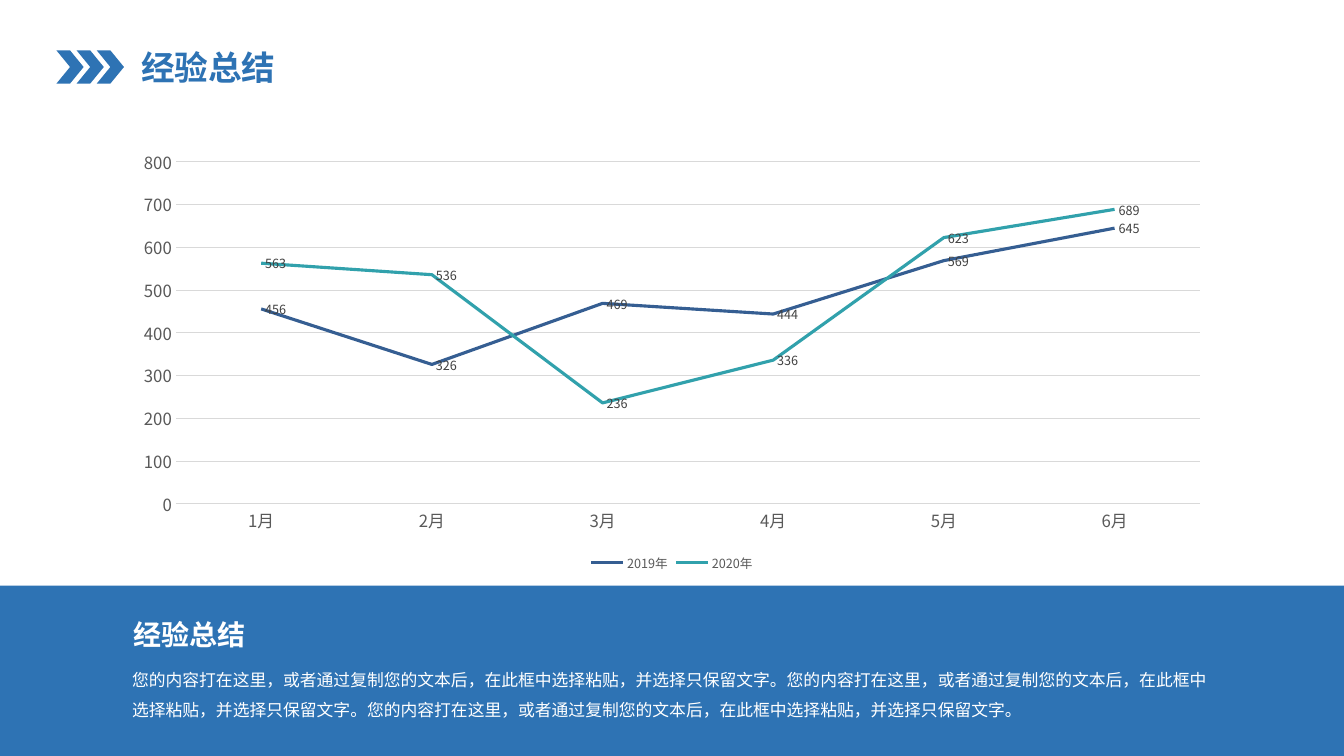
from lxml.etree import SubElement
from pptx import Presentation
from pptx.chart.data import CategoryChartData
from pptx.dml.color import RGBColor
from pptx.enum.chart import XL_CHART_TYPE, XL_LABEL_POSITION, XL_LEGEND_POSITION, XL_MARKER_STYLE, XL_TICK_MARK
from pptx.enum.shapes import MSO_SHAPE
from pptx.enum.text import MSO_ANCHOR, MSO_AUTO_SIZE, PP_ALIGN
from pptx.oxml.ns import qn
from pptx.util import Inches, Pt

TITLE = "经验总结"
SENTENCE = "您的内容打在这里，或者通过复制您的文本后，在此框中选择粘贴，并选择只保留文字。"
SUMMARY = SENTENCE * 3
MONTHS = [f"{month}月" for month in range(1, 7)]
SERIES = {
    "2019年": ("navy", (456, 326, 469, 444, 569, 645)),
    "2020年": ("teal", (563, 536, 236, 336, 623, 689)),
}
COLORS = {
    "blue": "2E73B4", "navy": "355E92", "teal": "31A1AC", "white": "FFFFFF",
    "grid": "D9D9D9", "axis": "595959", "label": "404040", "black": "000000",
}
FONT = "Noto Sans CJK SC"
WIDTH, HEIGHT = 13.33, 7.5
BAND_TOP = 5.81
CHEVRON_COUNT, CHEVRON_STEP = 3, 0.2
CHART_BOX = (1.21, 1.4, 10.91, 4.31)
PLOT_SHARES = {"x": 0.049, "y": 0.048, "w": 0.931, "h": 0.787}


def color(name):
    return RGBColor.from_string(COLORS[name])


def inches(*lengths):
    return [Inches(length) for length in lengths]


def set_attributes(target, values):
    for name, value in values.items():
        setattr(target, name, value)


def set_font(font, size, color_name, bold=False):
    set_attributes(font, {"name": FONT, "size": Pt(size), "bold": bold})
    font.color.rgb = color(color_name)


def add_east_asian_font(element):
    for latin in list(element.iter(qn("a:latin"))):
        east_asian = latin.makeelement(qn("a:ea"), {"typeface": FONT})
        latin.addnext(east_asian)


def write_text(shape, text, box, size, color_name, bold=False, margin=0.0,
               wrap=True, anchor=MSO_ANCHOR.TOP, spacing=1.0):
    set_attributes(shape, dict(zip(("left", "top", "width", "height"), inches(*box))))
    frame = shape.text_frame
    frame.text = text
    set_attributes(frame, {
        "word_wrap": wrap, "auto_size": MSO_AUTO_SIZE.SHAPE_TO_FIT_TEXT,
        "vertical_anchor": anchor,
        "margin_left": Inches(margin), "margin_right": Inches(margin),
        "margin_top": Inches(margin / 2), "margin_bottom": Inches(margin / 2),
    })
    paragraph = frame.paragraphs[0]
    set_attributes(paragraph, {
        "alignment": PP_ALIGN.LEFT, "line_spacing": spacing, "space_before": Pt(0),
    })
    properties = paragraph._p.get_or_add_pPr()
    properties.set("marL", "0")
    properties.set("indent", "0")
    SubElement(properties, qn("a:buNone"))
    set_font(paragraph.runs[0].font, size, color_name, bold)
    add_east_asian_font(shape.element)


def add_blue_shape(shapes, kind, box):
    shape = shapes.add_shape(kind, *inches(*box))
    shape.shadow.inherit = False
    shape.fill.solid()
    shape.fill.fore_color.rgb = color("blue")
    shape.line.fill.background()
    return shape


def format_axes(chart):
    for axis in (chart.category_axis, chart.value_axis):
        set_attributes(axis, {
            "major_tick_mark": XL_TICK_MARK.NONE, "minor_tick_mark": XL_TICK_MARK.NONE,
        })
        set_font(axis.tick_labels.font, 12, "axis")
    set_attributes(chart.value_axis, {
        "minimum_scale": 0, "maximum_scale": 800, "major_unit": 100,
        "has_major_gridlines": True,
    })
    chart.value_axis.format.line.fill.background()
    for line_format in (chart.category_axis.format, chart.value_axis.major_gridlines.format):
        line_format.line.width = Pt(0.75)
        line_format.line.color.rgb = color("grid")


def format_series(series, color_name):
    series.smooth = False
    series.marker.style = XL_MARKER_STYLE.NONE
    series.format.line.width = Pt(2.25)
    series.format.line.color.rgb = color(color_name)
    labels = series.data_labels
    set_attributes(labels, {"show_value": True, "position": XL_LABEL_POSITION.RIGHT})
    set_font(labels.font, 9, "label")


def place_plot(chart):
    plot_area = chart._chartSpace.find(".//" + qn("c:plotArea"))
    for layout in plot_area.findall(qn("c:layout")):
        plot_area.remove(layout)
    layout = plot_area.makeelement(qn("c:layout"), {})
    plot_area.insert(0, layout)
    manual = SubElement(layout, qn("c:manualLayout"))
    settings = {"layoutTarget": "inner", "xMode": "edge", "yMode": "edge", **PLOT_SHARES}
    for name, value in settings.items():
        SubElement(manual, qn(f"c:{name}"), {"val": str(value)})


def add_line_chart(shapes):
    data = CategoryChartData()
    data.categories = MONTHS
    for name, (_, values) in SERIES.items():
        data.add_series(name, values)
    chart = shapes.add_chart(XL_CHART_TYPE.LINE, *inches(*CHART_BOX), data).chart
    set_attributes(chart, {"has_title": False, "has_legend": True})
    set_font(chart.font, 10, "black")
    set_attributes(chart.legend, {
        "position": XL_LEGEND_POSITION.BOTTOM, "include_in_layout": False,
    })
    set_font(chart.legend.font, 9, "axis")
    chart.plots[0].vary_by_categories = False
    format_axes(chart)
    for series in chart.plots[0].series:
        format_series(series, SERIES[series.name][0])
    place_plot(chart)
    add_east_asian_font(chart._chartSpace)


def main():
    presentation = Presentation()
    set_attributes(presentation, {"slide_width": Inches(WIDTH), "slide_height": Inches(HEIGHT)})
    slide = presentation.slides.add_slide(presentation.slide_layouts[1])
    shapes = slide.shapes
    band = add_blue_shape(shapes, MSO_SHAPE.RECTANGLE, (0, BAND_TOP, WIDTH, HEIGHT - BAND_TOP))
    shapes.title.element.addprevious(band.element)
    chevrons = shapes.add_group_shape()
    for index in range(CHEVRON_COUNT):
        add_blue_shape(chevrons.shapes, MSO_SHAPE.CHEVRON,
                       (0.56 + index * CHEVRON_STEP, 0.5, 0.27, 0.33))
    write_text(shapes.title, TITLE, (1.3, 0.42, 1.55, 0.5), 24, "blue", bold=True,
               margin=0.1, wrap=False)
    add_line_chart(shapes)
    heading = shapes.add_textbox(0, 0, 0, 0)
    write_text(heading, TITLE, (1.32, 6.13, 1.6, 0.34), 20, "white", bold=True)
    write_text(slide.placeholders[1], SUMMARY, (1.31, 6.54, 10.72, 0.61), 12, "white",
               spacing=1.5)
    presentation.save("out.pptx")


if __name__ == "__main__":
    main()
